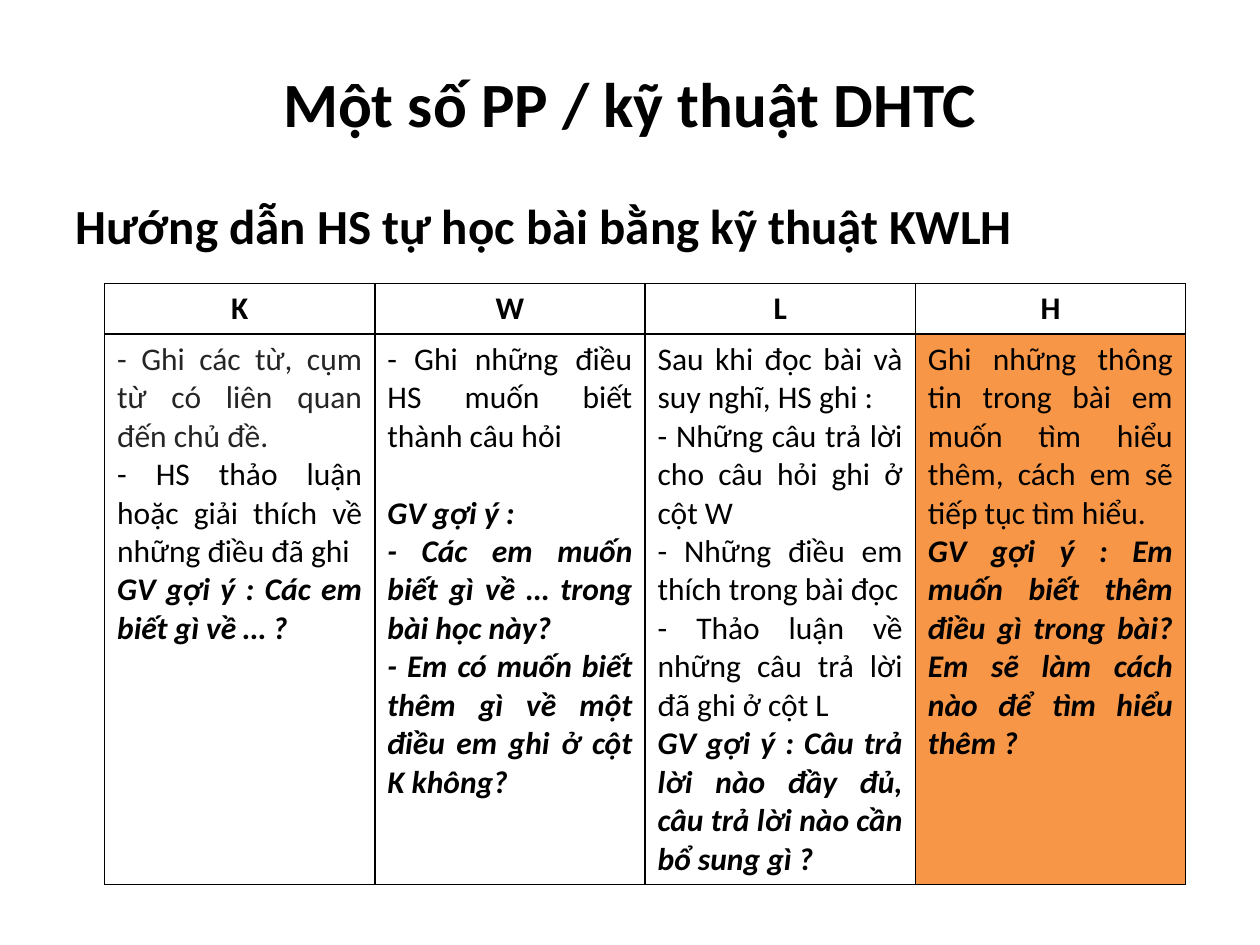
import dataclasses

import pptx
import pptx.dml.color
import pptx.enum.text
import pptx.oxml
import pptx.oxml.ns
import pptx.util

Inches = pptx.util.Inches
Pt = pptx.util.Pt
Align = pptx.enum.text.PP_ALIGN
Anchor = pptx.enum.text.MSO_ANCHOR


@dataclasses.dataclass(frozen=True)
class Theme:
    """Colours, font and type sizes of the slide."""
    font: str = "Calibri"
    ink: str = "000000"
    soft: str = "252525"
    paper: str = "FFFFFF"
    accent: str = "F79646"
    title: int = 36
    subtitle: int = 28
    cell: int = 18


THEME = Theme()
PLAIN = {}
SOFT = {"color": THEME.soft}
HINT = {"bold": True, "italic": True}
SPACED_HINT = {**HINT, "space_before": Pt(22)}

COLUMNS = [
    ("K", THEME.paper, [
        ("- Ghi các từ, cụm từ có liên quan đến chủ đề.", SOFT),
        ("- HS thảo luận hoặc giải thích về những điều đã ghi", PLAIN),
        ("GV gợi ý : Các em biết gì về … ?", HINT),
    ]),
    ("W", THEME.paper, [
        ("- Ghi những điều HS muốn biết thành câu hỏi", PLAIN),
        ("GV gợi ý :", SPACED_HINT),
        ("- Các em muốn biết gì về … trong bài học này?", HINT),
        ("- Em có muốn biết thêm gì về một điều em ghi ở cột K không?", HINT),
    ]),
    ("L", THEME.paper, [
        ("Sau khi đọc bài và suy nghĩ, HS ghi :", PLAIN),
        ("- Những câu trả lời cho câu hỏi ghi ở cột W", PLAIN),
        ("- Những điều em thích trong bài đọc", PLAIN),
        ("- Thảo luận về những câu trả lời đã ghi ở cột L", PLAIN),
        ("GV gợi ý : Câu trả lời nào đầy đủ, câu trả lời nào cần bổ sung gì ?", HINT),
    ]),
    ("H", THEME.accent, [
        ("Ghi những thông tin trong bài em muốn tìm hiểu thêm, "
         "cách em sẽ tiếp tục tìm hiểu.", PLAIN),
        ("GV gợi ý : Em muốn biết thêm điều gì trong bài? "
         "Em sẽ làm cách nào để tìm hiểu thêm ?", HINT),
    ]),
]


def rgb(value):
    """Return the colour object for a hex string."""
    return pptx.dml.color.RGBColor.from_string(value)


def write(tf, lines, size, align):
    """Fill a text frame with (text, format) paragraphs."""
    for i, (text, style) in enumerate(lines):
        style = dict(style)
        p = tf.paragraphs[0] if i == 0 else tf.add_paragraph()
        p.alignment = align
        p.space_before = style.pop("space_before", Pt(0))
        r = p.add_run()
        r.text = text
        r.font.color.rgb = rgb(style.pop("color", THEME.ink))
        values = {"name": THEME.font, "size": Pt(size), "bold": False, "italic": False}
        for name, value in {**values, **style}.items():
            setattr(r.font, name, value)


def add_heading(slide, box, text, size, align, anchor):
    """Place one bold line of text in the box."""
    tf = slide.shapes.add_textbox(*box).text_frame
    for name, value in {"word_wrap": True, "vertical_anchor": anchor}.items():
        setattr(tf, name, value)
    write(tf, [(text, {"bold": True})], size, align)


def set_borders(cell):
    """Draw a thin line on all four sides of a cell."""
    tcPr = cell._tc.get_or_add_tcPr()
    for side in ("lnL", "lnR", "lnT", "lnB"):
        tcPr.append(pptx.oxml.parse_xml(
            f'<a:{side} {pptx.oxml.ns.nsdecls("a")} w="{Pt(1)}"><a:solidFill>'
            f'<a:srgbClr val="{THEME.ink}"/></a:solidFill></a:{side}>'))


def fill_cell(cell, lines, color, align):
    """Give a cell its borders, fill and text."""
    set_borders(cell)
    cell.fill.solid()
    cell.fill.fore_color.rgb = rgb(color)
    write(cell.text_frame, lines, THEME.cell, align)


def add_kwlh_table(slide, box, columns, header_height):
    """Place a table with one heading and one text cell per column."""
    left, top, width, height = box
    table = slide.shapes.add_table(2, len(columns), left, top, width, height).table
    table.rows[0].height = header_height
    table.rows[1].height = height - header_height
    for i, (letter, color, lines) in enumerate(columns):
        table.columns[i].width = width // len(columns)
        fill_cell(table.cell(0, i), [(letter, {"bold": True})], THEME.paper, Align.CENTER)
        fill_cell(table.cell(1, i), lines, color, Align.JUSTIFY)


def main():
    """Build and save the slide."""
    prs = pptx.Presentation()
    prs.slide_width, prs.slide_height = Inches(10), Inches(7.5)
    slide = prs.slides.add_slide(prs.slide_layouts[6])
    add_heading(slide, (Inches(0.5), Inches(0.3), Inches(9), Inches(1.03)),
                "Một số PP / kỹ thuật DHTC", THEME.title, Align.CENTER, Anchor.MIDDLE)
    add_heading(slide, (Inches(0.5), Inches(1.5), Inches(9), Inches(0.6)),
                "Hướng dẫn HS tự học bài bằng kỹ thuật KWLH",
                THEME.subtitle, Align.LEFT, Anchor.TOP)
    add_kwlh_table(slide, (Inches(0.83), Inches(2.25), Inches(8.58), Inches(4.77)),
                   COLUMNS, Inches(0.4))
    prs.save("out.pptx")


if __name__ == "__main__":
    main()
